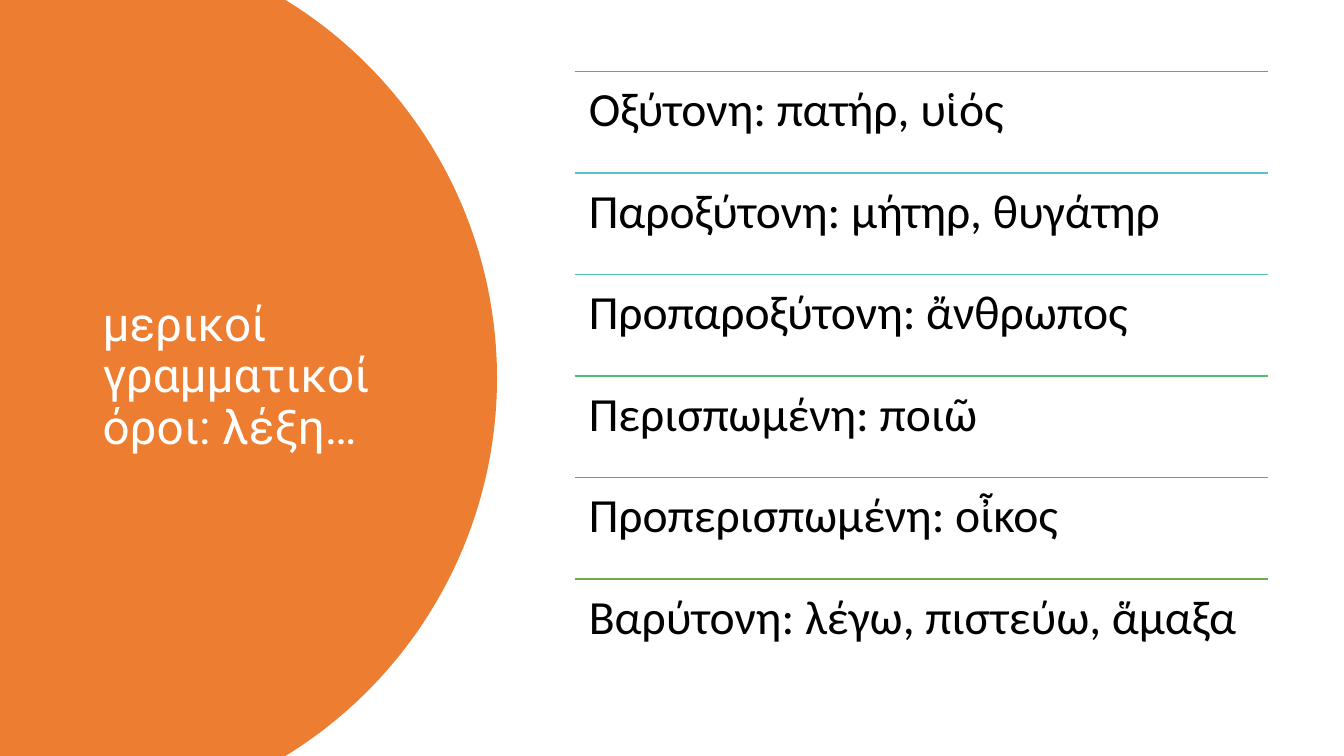
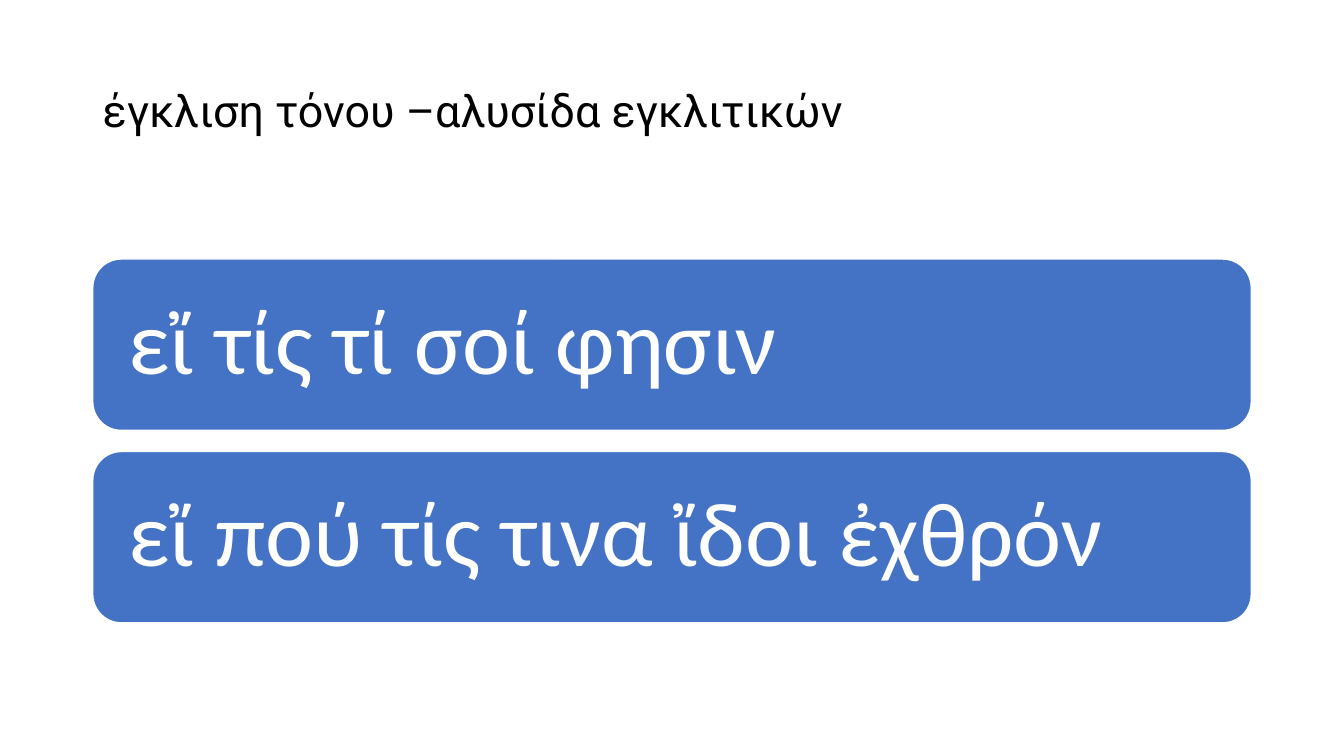
from dataclasses import dataclass
from math import asin, cos, sin

from lxml.etree import SubElement
from pptx import Presentation
from pptx.dml.color import RGBColor
from pptx.enum.shapes import MSO_CONNECTOR, MSO_SHAPE
from pptx.enum.text import MSO_ANCHOR, PP_ALIGN
from pptx.oxml.ns import qn
from pptx.util import Inches, Pt


@dataclass(frozen=True)
class Theme:
    orange: str = "ED7D31"
    blue: str = "4472C4"
    white: str = "FFFFFF"
    black: str = "000000"
    rules: tuple = ("5B9BD5", "55C3CF", "50C8A7", "4BC174", "4ABA46", "70AD47")
    title_font: str = "Roboto"
    body_font: str = "Calibri"
    side_title: int = 34
    top_title: int = 32
    term: int = 34
    example: int = 65
    rule_width: int = 1


theme = Theme()
WIDTH, HEIGHT = 13.33, 7.5
MARGIN = 0.92
CONTENT_WIDTH = WIDTH - 2 * MARGIN


def set_text(shape, text, font, size, color, anchor, inset_x=0.1, inset_y=0.05):
    """Fill a shape with one left-aligned, wrapping paragraph."""
    frame = shape.text_frame
    frame.word_wrap = True
    frame.vertical_anchor = anchor
    frame.margin_left = frame.margin_right = Inches(inset_x)
    frame.margin_top = frame.margin_bottom = Inches(inset_y)
    paragraph = frame.paragraphs[0]
    paragraph.text = text
    paragraph.alignment = PP_ALIGN.LEFT
    paragraph.line_spacing = 0.9
    paragraph.font.name = font
    paragraph.font.size = Pt(size)
    paragraph.font.color.rgb = RGBColor.from_string(color)


def add_title(slide, text, top, width, height, size, color):
    title = slide.shapes.add_textbox(
        Inches(MARGIN), Inches(top), Inches(width), Inches(height))
    set_text(title, text, theme.title_font, size, color, MSO_ANCHOR.MIDDLE)


deck = Presentation()
deck.slide_width, deck.slide_height = Inches(WIDTH), Inches(HEIGHT)
blank = deck.slide_layouts[6]

# Slide 1: grammatical terms beside an orange disc cut off by the slide edges
terms_slide = deck.slides.add_slide(blank)

radius, center_x, center_y = 4.4, 0.53, HEIGHT / 2
half_angle = asin(center_y / radius)
steps = 120
angles = [half_angle * (2 * step / steps - 1) for step in range(steps + 1)]
arc = [(Inches(center_x + radius * cos(angle)), Inches(center_y + radius * sin(angle)))
       for angle in angles]
outline = terms_slide.shapes.build_freeform(0, 0)
outline.add_line_segments(arc + [(0, Inches(HEIGHT))], close=True)
disc = outline.convert_to_shape()
disc.shadow.inherit = False
disc.fill.solid()
disc.fill.fore_color.rgb = RGBColor.from_string(theme.orange)
disc.line.fill.background()

add_title(terms_slide, "μερικοί γραμματικοί όροι: λέξη…",
          0.7, 3.23, 6.09, theme.side_title, theme.white)

terms = (
    "Οξύτονη: πατήρ, υἱός",
    "Παροξύτονη: μήτηρ, θυγάτηρ",
    "Προπαροξύτονη: ἄνθρωπος",
    "Περισπωμένη: ποιῶ",
    "Προπερισπωμένη: οἶκος",
    "Βαρύτονη: λέγω, πιστεύω, ἅμαξα",
)
list_left, list_top, list_width, list_height = 5.7, 0.71, 6.88, 6.04
row_height = list_height / len(terms)
for row, (term, rule_color) in enumerate(zip(terms, theme.rules)):
    left, top = Inches(list_left), Inches(list_top + row * row_height)
    rule = terms_slide.shapes.add_connector(
        MSO_CONNECTOR.STRAIGHT, left, top, left + Inches(list_width), top)
    rule.line.color.rgb = RGBColor.from_string(rule_color)
    rule.line.width = Pt(theme.rule_width)
    SubElement(rule.element.spPr, qn("a:effectLst"))
    entry = terms_slide.shapes.add_textbox(
        left, top, Inches(list_width), Inches(row_height))
    set_text(entry, term, theme.body_font, theme.term, theme.black,
             MSO_ANCHOR.TOP, 0.14, 0.14)

# Slide 2: chains of enclitics, one card each
enclitics_slide = deck.slides.add_slide(blank)
add_title(enclitics_slide, "έγκλιση τόνου –αλυσίδα εγκλιτικών",
          0.4, CONTENT_WIDTH, 1.45, theme.top_title, theme.black)

examples = ("εἴ τίς τί σοί φησιν", "εἴ πού τίς τινα ἴδοι ἐχθρόν")
cards_top, card_height, card_gap = 2.57, 1.7, 0.21
for row, example in enumerate(examples):
    card = enclitics_slide.shapes.add_shape(
        MSO_SHAPE.ROUNDED_RECTANGLE,
        Inches(MARGIN), Inches(cards_top + row * (card_height + card_gap)),
        Inches(CONTENT_WIDTH), Inches(card_height))
    card.shadow.inherit = False
    card.fill.solid()
    card.fill.fore_color.rgb = RGBColor.from_string(theme.blue)
    card.line.color.rgb = RGBColor.from_string(theme.white)
    card.line.width = Pt(theme.rule_width)
    set_text(card, example, theme.body_font, theme.example, theme.white,
             MSO_ANCHOR.MIDDLE, 0.27, 0.27)

deck.save("out.pptx")
